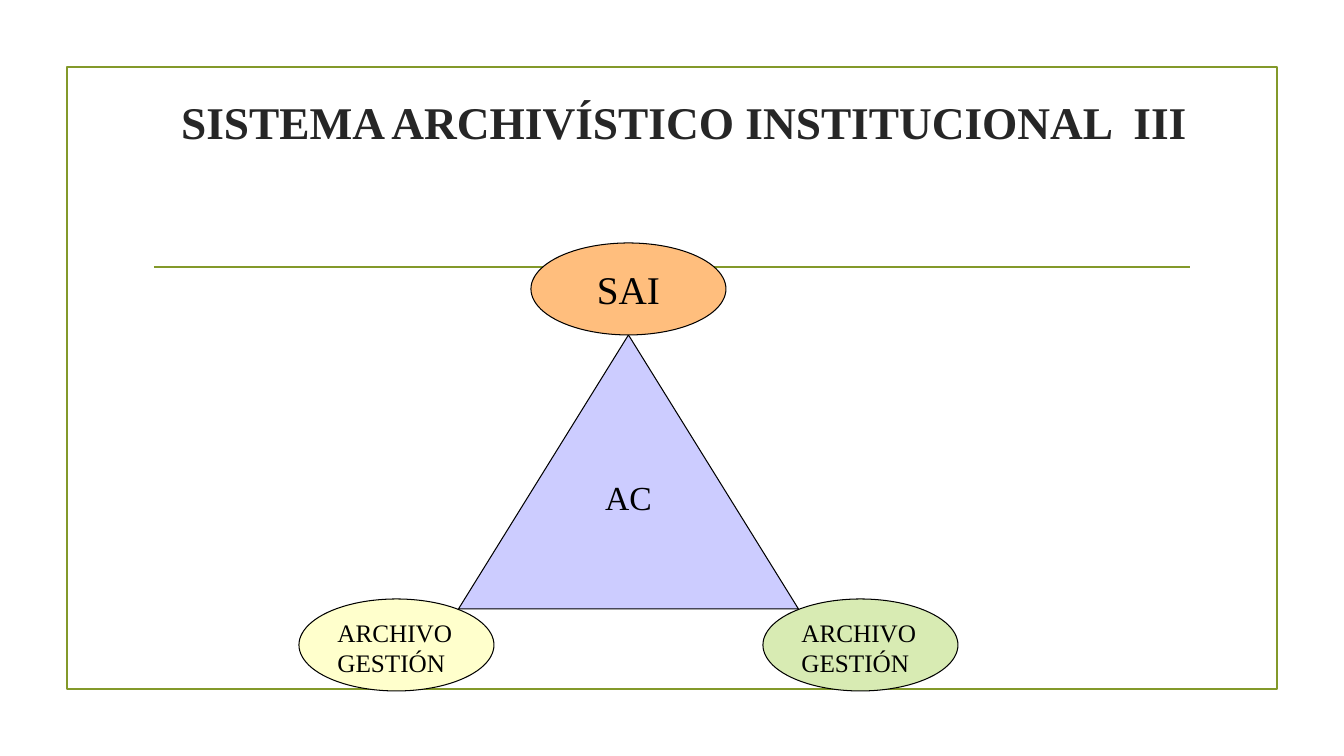
"""Build the slide of the institutional archive system diagram."""
from lxml import etree
from pptx import Presentation
from pptx.dml.color import RGBColor
from pptx.enum.shapes import MSO_CONNECTOR, MSO_SHAPE
from pptx.enum.text import MSO_ANCHOR, PP_ALIGN
from pptx.oxml.ns import qn
from pptx.util import Pt

PX = 12192000 / 1344
FONT = "Times New Roman"
LEFT, CENTER = PP_ALIGN.LEFT, PP_ALIGN.CENTER
TOP, MIDDLE = MSO_ANCHOR.TOP, MSO_ANCHOR.MIDDLE
RECTANGLE, OVAL = MSO_SHAPE.RECTANGLE, MSO_SHAPE.OVAL
TRIANGLE, STRAIGHT = MSO_SHAPE.ISOSCELES_TRIANGLE, MSO_CONNECTOR.STRAIGHT

COLORS = {
    "olive": "83992A", "title": "262626", "black": "000000",
    "lilac": "CCCCFF", "yellow": "FFFFCC", "orange": "FFBE7D", "green": "D8EBB3",
}
TITLE = "SISTEMA ARCHIVÍSTICO INSTITUCIONAL  III"
TITLE_BOX = (167, 81, 1034, 81)
FRAME_BOX = (67, 67, 1210, 622)
RULE = (154, 267, 1190, 267)

CENTRAL = {"lines": ["AC"], "fill": "lilac", "size": 24, "align": CENTER, "anchor": TOP}
UNITS = [
    {"lines": ["ARCHIVO", "GESTIÓN"], "fill": "yellow", "size": 18, "align": LEFT, "anchor": TOP},
    {"lines": ["SAI"], "fill": "orange", "size": 28, "align": CENTER, "anchor": MIDDLE},
    {"lines": ["ARCHIVO", "GESTIÓN"], "fill": "green", "size": 18, "align": LEFT, "anchor": TOP},
]
OVAL_LEFT, OVAL_STEP, OVAL_WIDTH, OVAL_HEIGHT = 299, 232, 195, 92
OVAL_TOPS = (243, 599)
TRIANGLE_WIDTH, TRIANGLE_HEIGHT = 340, 274


def emu(box):
    return [round(length * PX) for length in box]


def color(name):
    return RGBColor.from_string(COLORS[name])


def style_line(line, name, width):
    line.color.rgb = color(name)
    line.width = Pt(width)


def write(box, lines, align, anchor, **format_values):
    frame = box.text_frame
    frame.word_wrap = True
    frame.vertical_anchor = anchor
    frame.text = "\n".join(lines)
    for para in frame.paragraphs:
        para.alignment = align
        for span in para.runs:
            span.font.color.rgb = color(format_values["color"])
            for name in ("name", "size", "bold"):
                setattr(span.font, name, format_values[name])


def add_node(page, kind, box, node):
    shape = page.shapes.add_shape(kind, *emu(box))
    shape.shadow.inherit = False
    shape.fill.solid()
    shape.fill.fore_color.rgb = color(node["fill"])
    style_line(shape.line, "black", 0.75)
    write(shape, node["lines"], node["align"], node["anchor"],
          name=FONT, size=Pt(node["size"]), bold=False, color="black")


def main():
    deck = Presentation()
    deck.slide_width, deck.slide_height = emu((1344, 756))
    page = deck.slides.add_slide(deck.slide_layouts[5])

    title = page.shapes.title
    title.left, title.top, title.width, title.height = emu(TITLE_BOX)
    write(title, [TITLE], CENTER, MIDDLE,
          name=FONT, size=Pt(32.4), bold=True, color="title")

    frame = page.shapes.add_shape(RECTANGLE, *emu(FRAME_BOX))
    frame.shadow.inherit = False
    frame.fill.background()
    style_line(frame.line, "olive", 1.25)

    rule = page.shapes.add_connector(STRAIGHT, *emu(RULE))
    style_line(rule.line, "olive", 1.25)
    etree.SubElement(rule.element.spPr, qn("a:effectLst"))

    apex = OVAL_LEFT + OVAL_STEP + OVAL_WIDTH / 2
    triangle_box = (apex - TRIANGLE_WIDTH / 2, OVAL_TOPS[0] + OVAL_HEIGHT,
                    TRIANGLE_WIDTH, TRIANGLE_HEIGHT)
    add_node(page, TRIANGLE, triangle_box, CENTRAL)
    for index, unit in enumerate(UNITS):
        top = OVAL_TOPS[0] if index == 1 else OVAL_TOPS[1]
        oval_box = (OVAL_LEFT + index * OVAL_STEP, top, OVAL_WIDTH, OVAL_HEIGHT)
        add_node(page, OVAL, oval_box, unit)

    deck.save("out.pptx")


if __name__ == "__main__":
    main()
